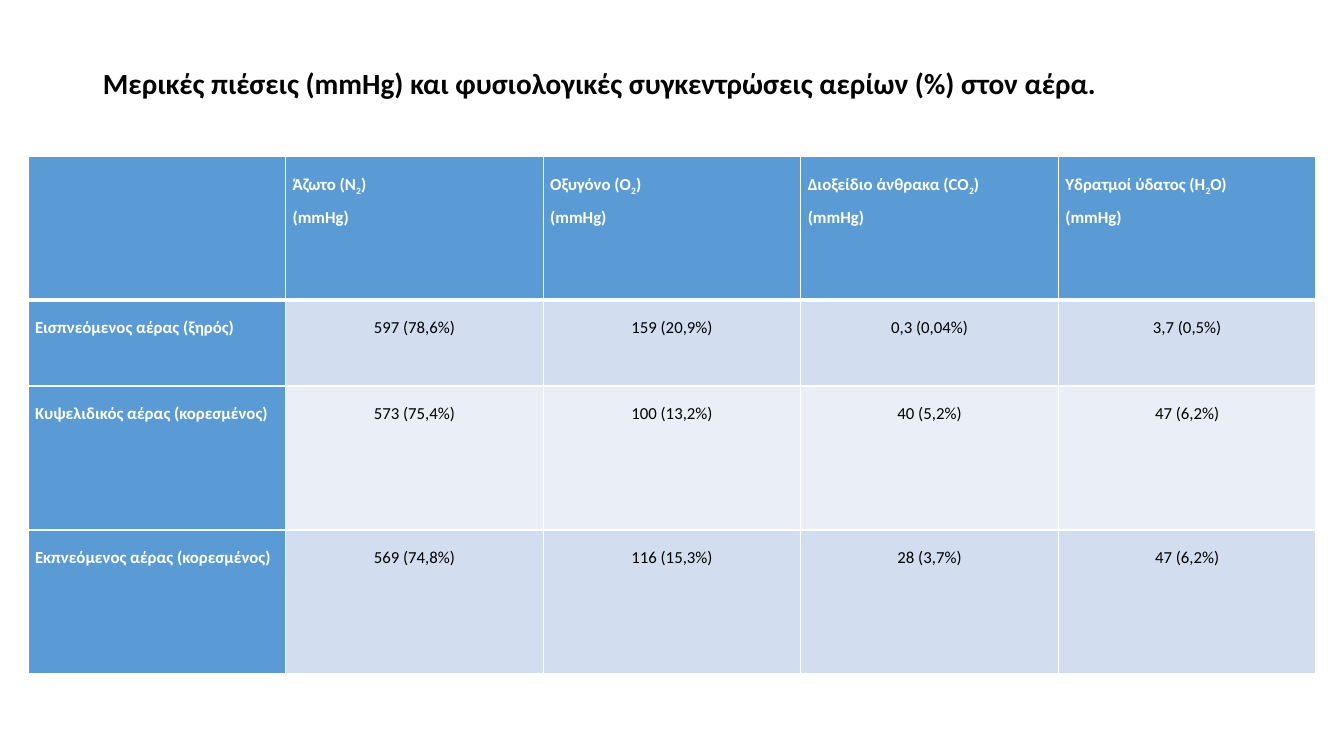
"""Build a slide tabulating partial pressures of gases in air."""
import lxml.etree
import pptx
import pptx.dml.color
import pptx.enum.text
import pptx.oxml.ns
import pptx.util

THEME = {
    "font": "Calibri", "title_size": 36, "cell_size": 12,
    "text": "000000", "light_text": "FFFFFF", "border": "FFFFFF",
    "header": "5B9BD5", "bands": ["D2DEEF", "EAEFF7"],
}
SCALE = 12192000 / 1344
GASES = [("Άζωτο (Ν", ")"), ("Οξυγόνο (Ο", ")"),
         ("Διοξείδιο άνθρακα (CO", ")"), ("Υδρατμοί ύδατος (Η", "Ο)")]
AIR_ROWS = [
    ["Εισπνεόμενος αέρας (ξηρός)", "597 (78,6%)", "159 (20,9%)", "0,3 (0,04%)", "3,7 (0,5%)"],
    ["Κυψελιδικός αέρας (κορεσμένος)", "573 (75,4%)", "100 (13,2%)", "40 (5,2%)", "47 (6,2%)"],
    ["Εκπνεόμενος αέρας (κορεσμένος)", "569 (74,8%)", "116 (15,3%)", "28 (3,7%)", "47 (6,2%)"],
]
ROW_HEIGHTS = [144, 86, 144, 144]


def px(length):
    return pptx.util.Emu(round(length * SCALE))


def write(para, texts, size, color, bold, spacing, lowered=None):
    para.line_spacing = spacing
    para.font.name = THEME["font"]
    para.font.size = pptx.util.Pt(size)
    para.font.bold = bold
    para.font.color.rgb = pptx.dml.color.RGBColor.from_string(color)
    for index, text in enumerate(texts):
        span = para.add_run()
        span.text = text
        if index == lowered:
            span._r.get_or_add_rPr().set("baseline", "-25000")


deck = pptx.Presentation()
deck.slide_width, deck.slide_height = px(1344), px(756)
page = deck.slides.add_slide(deck.slide_layouts[6])

title_box = page.shapes.add_textbox(px(93), px(24), px(1159), px(79))
title_frame = title_box.text_frame
title_frame.word_wrap = True
title_frame.vertical_anchor = pptx.enum.text.MSO_ANCHOR.MIDDLE
write(title_frame.paragraphs[0],
      ["Μερικές πιέσεις (mmHg) και φυσιολογικές συγκεντρώσεις αερίων (%) στον αέρα."],
      THEME["title_size"], THEME["text"], True, 0.9, lowered=0)

table = page.shapes.add_table(4, 5, px(28), px(156), px(1288), px(sum(ROW_HEIGHTS))).table
table.first_col = True
for row, height in zip(table.rows, ROW_HEIGHTS):
    row.height = px(height)

for row_index in range(4):
    for column_index in range(5):
        cell = table.cell(row_index, column_index)
        is_header = row_index == 0 or column_index == 0
        fill = THEME["header"] if is_header else THEME["bands"][(row_index - 1) % 2]
        cell.fill.solid()
        cell.fill.fore_color.rgb = pptx.dml.color.RGBColor.from_string(fill)
        cell.margin_left = cell.margin_right = cell.margin_top = cell.margin_bottom = px(7)

        properties = cell._tc.get_or_add_tcPr()
        for position, side in enumerate(["lnL", "lnR", "lnT", "lnB"]):
            thick = (row_index, side) in [(0, "lnB"), (1, "lnT")]
            line = lxml.etree.Element(pptx.oxml.ns.qn(f"a:{side}"),
                                      w=str(pptx.util.Pt(3 if thick else 1)))
            solid = lxml.etree.SubElement(line, pptx.oxml.ns.qn("a:solidFill"))
            lxml.etree.SubElement(solid, pptx.oxml.ns.qn("a:srgbClr"), val=THEME["border"])
            properties.insert(position, line)

        para = cell.text_frame.paragraphs[0]
        color = THEME["light_text"] if is_header else THEME["text"]
        style = (THEME["cell_size"], color, is_header, 1.5)
        if row_index:
            write(para, [AIR_ROWS[row_index - 1][column_index]], *style)
            if column_index:
                para.alignment = pptx.enum.text.PP_ALIGN.CENTER
        elif column_index:
            start, end = GASES[column_index - 1]
            write(para, [start, "2", end], *style, lowered=1)
            write(cell.text_frame.add_paragraph(), ["(mmHg)"], *style)

deck.save("out.pptx")
